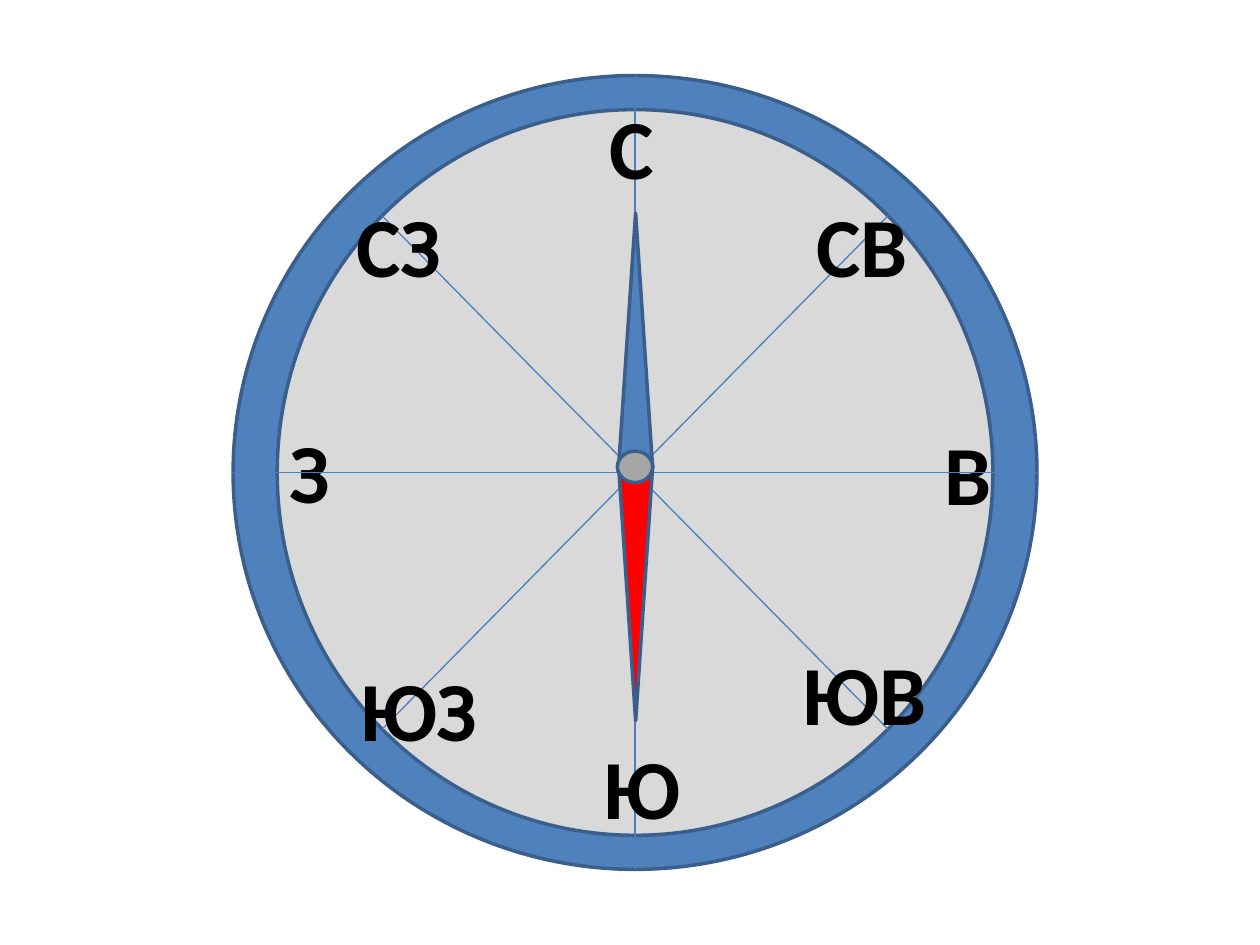
import pptx
import pptx.util
import pptx.dml.color
import pptx.enum.shapes
import pptx.oxml.ns
from lxml import etree

Inches, Pt = pptx.util.Inches, pptx.util.Pt
SHAPE = pptx.enum.shapes.MSO_SHAPE

COLORS = {
    "blue": "4F81BD",
    "outline": "3A5F8C",
    "ray": "4B7EBC",
    "dial": "D9D9D9",
    "south": "FF0000",
    "hub": "A6A6A6",
    "text": "000000",
}

CX, CY = 5.04, 3.75          # centre of the dial
RING_W, RING_H = 6.38, 6.3
DIAL_W, DIAL_H = 5.68, 5.76
DIAG_X, DIAG_Y = 2.01, 2.04  # reach of the diagonal rays

# Direction: left, top, width
LABELS = {
    "С": (4.74, 0.71, 0.66),
    "Ю": (4.69, 5.79, 0.51),
    "З": (2.2, 3.28, 0.52),
    "В": (7.4, 3.3, 0.6),
    "СВ": (6.38, 1.49, 1.02),
    "ЮВ": (6.27, 5.04, 1.24),
    "СЗ": (2.73, 1.49, 0.94),
    "ЮЗ": (2.76, 5.17, 1.26),
}


def rgb(name):
    return pptx.dml.color.RGBColor.from_string(COLORS[name])


def add_part(shapes, kind, x, y, w, h, fill, rotation=0):
    sp = shapes.add_shape(kind, Inches(x), Inches(y), Inches(w), Inches(h))
    sp.rotation = rotation
    sp.shadow.inherit = False
    sp.fill.solid()
    sp.fill.fore_color.rgb = rgb(fill)
    sp.line.color.rgb = rgb("outline")
    sp.line.width = Pt(2)


def add_disc(shapes, w, h, fill):
    add_part(shapes, SHAPE.OVAL, CX - w / 2, CY - h / 2, w, h, fill)


def add_ray(shapes, dx, dy):
    """Line through the centre, reaching dx, dy to either side."""
    c = shapes.add_connector(
        pptx.enum.shapes.MSO_CONNECTOR.STRAIGHT,
        Inches(CX - dx), Inches(CY - dy), Inches(CX + dx), Inches(CY + dy))
    c.line.color.rgb = rgb("ray")
    c.line.width = Pt(0.75)
    etree.SubElement(c.line._get_or_add_ln().getparent(),
                     pptx.oxml.ns.qn("a:effectLst"))


def add_label(shapes, text, x, y, w):
    tf = shapes.add_textbox(Inches(x), Inches(y), Inches(w), Inches(0.91)).text_frame
    tf.word_wrap = True
    r = tf.paragraphs[0].add_run()
    r.text = text
    r.font.name = "Calibri"
    r.font.size = Pt(48)
    r.font.bold = True
    r.font.color.rgb = rgb("text")


def main():
    prs = pptx.Presentation()
    prs.slide_width, prs.slide_height = Inches(10), Inches(7.5)
    s = prs.slides.add_slide(prs.slide_layouts[6])

    # Dial with rays and directions
    dial = s.shapes.add_group_shape().shapes
    add_disc(dial, RING_W, RING_H, "blue")
    add_disc(dial, DIAL_W, DIAL_H, "dial")
    for dx, dy in ((0, RING_H / 2), (DIAG_X, DIAG_Y),
                   (DIAG_X, -DIAG_Y), (DIAL_W / 2, 0)):
        add_ray(dial, dx, dy)
    for text, box in LABELS.items():
        add_label(dial, text, *box)

    # West-east line across the ring
    add_ray(s.shapes, RING_W / 2, 0)

    # Needle and hub
    needle = s.shapes.add_group_shape().shapes
    add_part(needle, SHAPE.ISOSCELES_TRIANGLE, 4.91, 1.69, 0.27, 2.02, "blue")
    add_part(needle, SHAPE.ISOSCELES_TRIANGLE, 4.91, 3.7, 0.27, 2.02, "south", 180)
    add_part(needle, SHAPE.OVAL, 4.9, 3.58, 0.28, 0.25, "hub")

    prs.save("out.pptx")


if __name__ == "__main__":
    main()
